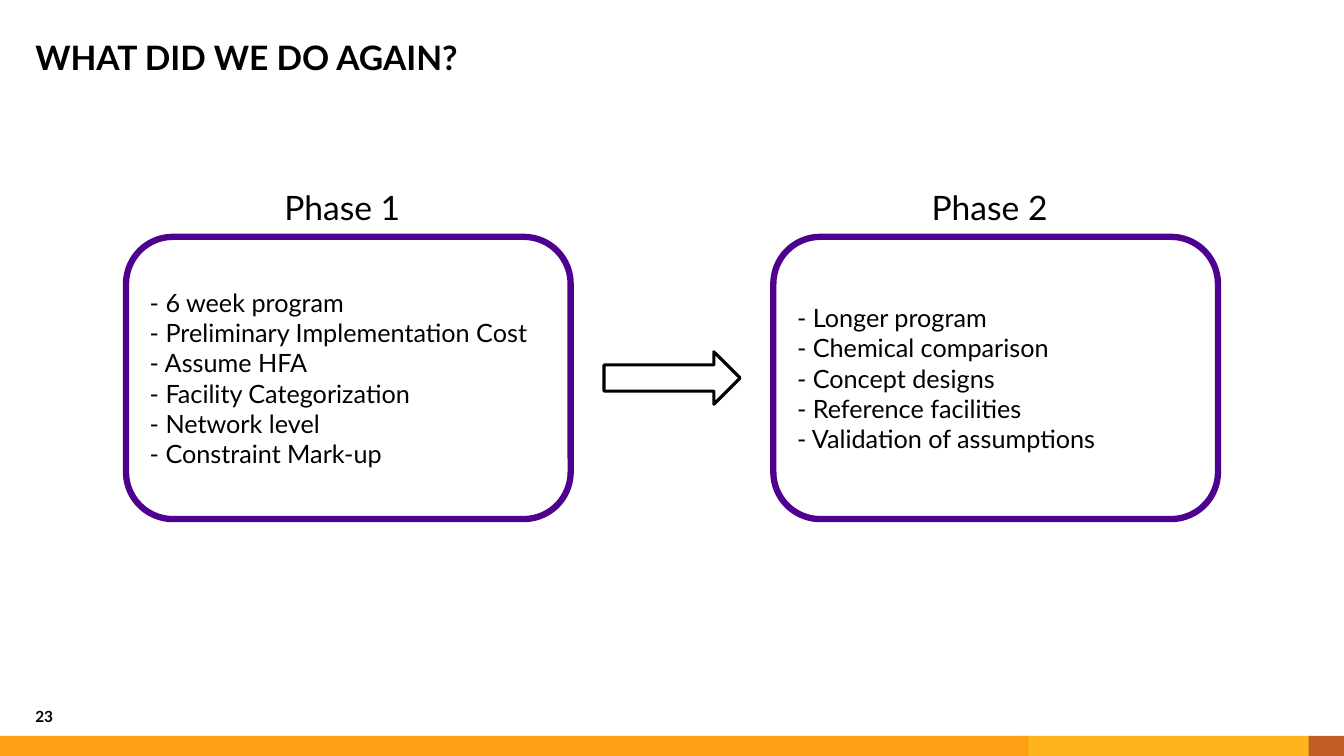
from pptx import Presentation
from pptx import util as u
from pptx.dml.color import RGBColor
from pptx.enum import shapes, text

COLOURS = {
    "black": "000000",
    "purple": "4E008E",
    "orange": "FFA014",
    "amber": "FFB41E",
    "rust": "C05D27",
}
PHASES = [
    ("Phase 1", [
        "- 6 week program",
        "- Preliminary Implementation Cost",
        "- Assume HFA",
        "- Facility Categorization",
        "- Network level",
        "- Constraint Mark-up",
    ]),
    ("Phase 2", [
        "- Longer program",
        "- Chemical comparison",
        "- Concept designs",
        "- Reference facilities",
        "- Validation of assumptions",
    ]),
]


class SlideBuilder:
    font = "Lato"
    scale = 9144

    def __init__(self, presentation):
        presentation.slide_width = self.px(1333)
        presentation.slide_height = self.px(750)
        self.slide = presentation.slides.add_slide(presentation.slide_layouts[5])

    def px(self, length):
        return u.Emu(length * self.scale)

    def set_text(self, shape, lines, size, bold=False, spacing=1.0, inset=0,
                 anchor=text.MSO_ANCHOR.MIDDLE):
        frame = shape.text_frame
        frame.text = "\n".join(lines)
        frame.word_wrap = True
        frame.auto_size = text.MSO_AUTO_SIZE.NONE
        frame.vertical_anchor = anchor
        frame.margin_left = frame.margin_right = self.px(inset)
        frame.margin_top = frame.margin_bottom = self.px(inset // 2)
        for paragraph in frame.paragraphs:
            paragraph.alignment = text.PP_ALIGN.LEFT
            paragraph.line_spacing = spacing
            paragraph.space_before = u.Pt(0)
            for run in paragraph.runs:
                run.font.name = self.font
                run.font.size = u.Pt(size)
                run.font.bold = bold
                run.font.color.rgb = RGBColor.from_string(COLOURS["black"])

    def title(self, wording, left, top, width, height):
        shape = self.slide.shapes.title
        shape.left, shape.top = self.px(left), self.px(top)
        shape.width, shape.height = self.px(width), self.px(height)
        self.set_text(shape, [wording], 24, bold=True, spacing=0.9)

    def label(self, wording, left, top, width, height, size, **style):
        shape = self.slide.shapes.add_textbox(
            *map(self.px, (left, top, width, height)))
        self.set_text(shape, [wording], size, **style)

    def shape(self, kind, left, top, width, height, fill=None, line=None, weight=0):
        shape = self.slide.shapes.add_shape(
            kind, *map(self.px, (left, top, width, height)))
        shape.shadow.inherit = False
        if fill:
            shape.fill.solid()
            shape.fill.fore_color.rgb = RGBColor.from_string(COLOURS[fill])
        else:
            shape.fill.background()
        if line:
            shape.line.color.rgb = RGBColor.from_string(COLOURS[line])
            shape.line.width = u.Pt(weight)
        else:
            shape.line.fill.background()
        return shape

    def phase(self, heading, items, left):
        box = self.shape(shapes.MSO_SHAPE.ROUNDED_RECTANGLE, left, 235, 441, 280,
                         line="purple", weight=4.5)
        self.set_text(box, items, 18, inset=10)
        self.label(heading, left + 157, 181, 128, 54, 24, spacing=0.9)


def main():
    presentation = Presentation()
    builder = SlideBuilder(presentation)
    for left, width, fill in [(1011, 290, "amber"), (1298, 35, "rust"),
                              (0, 1020, "orange")]:
        builder.shape(shapes.MSO_SHAPE.RECTANGLE, left, 730, width, 20, fill=fill)
    builder.label("23", 35, 690, 85, 30, 11, bold=True,
                  anchor=text.MSO_ANCHOR.BOTTOM)
    builder.title("WHAT DID WE DO AGAIN?", 35, 24, 1260, 70)
    for index, (heading, items) in enumerate(PHASES):
        builder.phase(heading, items, 125 + 642 * index)
    builder.shape(shapes.MSO_SHAPE.RIGHT_ARROW, 599, 349, 135, 52,
                  line="black", weight=2.25)
    presentation.save("out.pptx")


if __name__ == "__main__":
    main()
